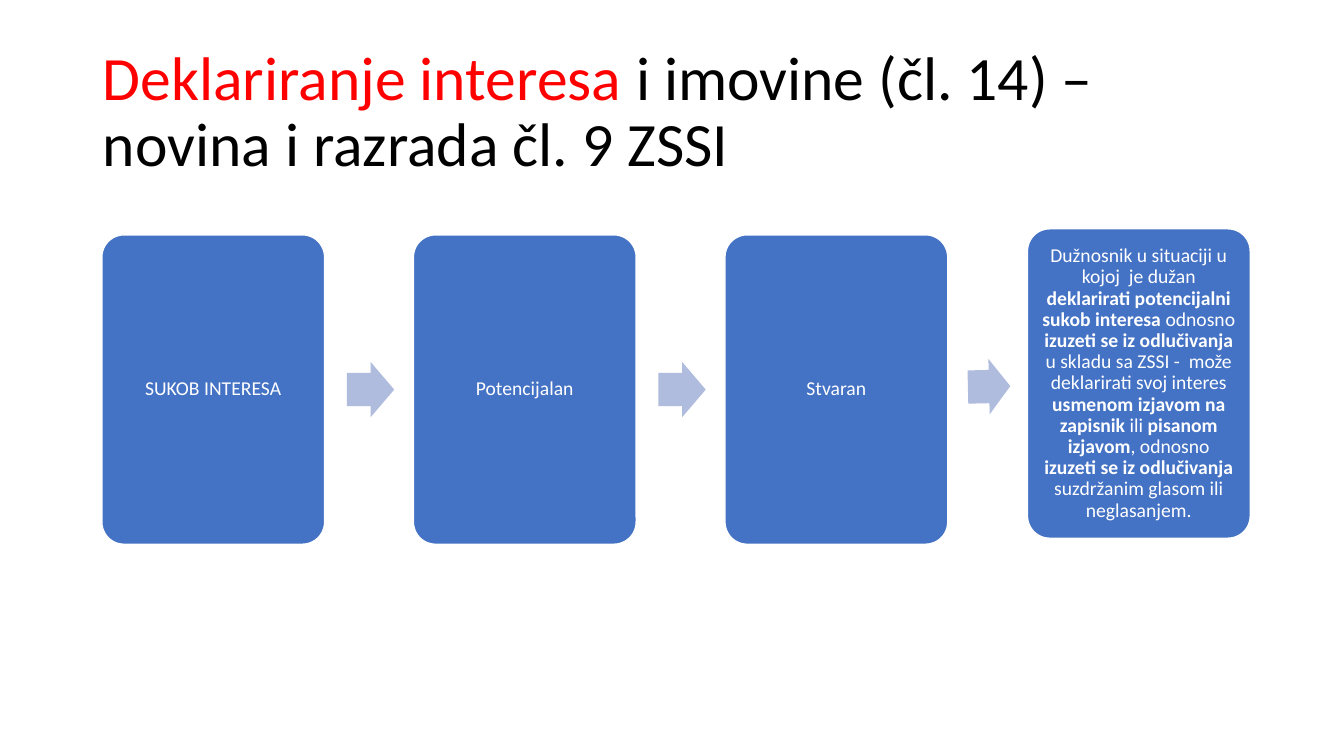
from dataclasses import dataclass

from pptx import Presentation
from pptx import util as u
from pptx.dml.color import RGBColor
from pptx.enum import shapes, text


@dataclass(frozen=True)
class Theme:
    font: str = "Calibri"
    title_size: int = 44
    body_size: int = 14
    black: str = "000000"
    white: str = "FFFFFF"
    red: str = "FF0000"
    box: str = "4472C4"
    arrow: str = "B0BCDE"


THEME = Theme()

# Grid of the process, in inches
LEFT, TOP, PITCH = 1.01, 2.33, 3.09
BOX_W, BOX_H = 2.21, 3.07
ARROW_H, ARROW_GAP = 0.55, 0.22
LAST_LEFT, LAST_TOP = 10.19, 2.27

# Each step is a list of (text, bold) runs
STEPS = [
    [("SUKOB INTERESA", False)],
    [("Potencijalan", False)],
    [("Stvaran", False)],
    [
        ("Dužnosnik u situaciji u kojoj  je dužan ", False),
        ("deklarirati potencijalni sukob interesa ", True),
        ("odnosno ", False),
        ("izuzeti se iz odlučivanja ", True),
        ("u skladu sa ZSSI -  može deklarirati svoj interes ", False),
        ("usmenom izjavom na zapisnik", True),
        (" ili ", False),
        ("pisanom izjavom", True),
        (", odnosno ", False),
        ("izuzeti se iz odlučivanja ", True),
        ("suzdržanim glasom ili neglasanjem.", False),
    ],
]


def rgb(value):
    return RGBColor.from_string(value)


def format_paragraph(p, size, align):
    p.font.name, p.font.size = THEME.font, u.Pt(size)
    p.alignment, p.line_spacing = align, 0.9


def add_title(s, parts):
    sp = s.shapes.title
    sp.left, sp.top, sp.width, sp.height = map(u.Inches, (0.92, 0.4, 11.5, 1.45))
    tf = sp.text_frame
    tf.word_wrap, tf.auto_size = True, text.MSO_AUTO_SIZE.NONE
    tf.vertical_anchor = text.MSO_ANCHOR.MIDDLE
    p = tf.paragraphs[0]
    format_paragraph(p, THEME.title_size, text.PP_ALIGN.LEFT)
    for words, color in parts:
        r = p.add_run()
        r.text = words
        r.font.color.rgb = rgb(color)


def add_block(s, kind, box, fill, adjustments):
    sp = s.shapes.add_shape(kind, *map(u.Inches, box))
    sp.shadow.inherit = False
    sp.fill.solid()
    sp.fill.fore_color.rgb = rgb(fill)
    sp.line.fill.background()
    for i, value in enumerate(adjustments):
        sp.adjustments[i] = value
    return sp


def add_step(s, left, top, runs):
    sp = add_block(s, shapes.MSO_SHAPE.ROUNDED_RECTANGLE,
                   (left, top, BOX_W, BOX_H), THEME.box, [0.1])
    sp.line.color.rgb = rgb(THEME.white)
    sp.line.width = u.Pt(1)
    tf = sp.text_frame
    tf.word_wrap, tf.vertical_anchor = True, text.MSO_ANCHOR.MIDDLE
    tf.margin_left = tf.margin_right = tf.margin_top = tf.margin_bottom = u.Inches(0.06)
    p = tf.paragraphs[0]
    format_paragraph(p, THEME.body_size, text.PP_ALIGN.CENTER)
    p.font.color.rgb = rgb(THEME.white)
    for words, bold in runs:
        r = p.add_run()
        r.text, r.font.bold = words, bold


def add_arrow(s, left, middle, width, rotation=0):
    sp = add_block(s, shapes.MSO_SHAPE.RIGHT_ARROW,
                   (left, middle - ARROW_H / 2, width, ARROW_H), THEME.arrow, [0.6, 0.5])
    sp.rotation = rotation


def main():
    prs = Presentation()
    prs.slide_width, prs.slide_height = u.Inches(13.33), u.Inches(7.5)
    s = prs.slides.add_slide(prs.slide_layouts[5])

    # Title
    add_title(s, [("Deklariranje interesa ", THEME.red),
                  ("i imovine (čl. 14) – novina i razrada čl. 9 ZSSI", THEME.black)])

    # Evenly spaced steps, then the raised last one
    places = [(LEFT + i * PITCH, TOP) for i in range(3)] + [(LAST_LEFT, LAST_TOP)]
    for (left, top), runs in zip(places, STEPS):
        add_step(s, left, top, runs)

    # Arrows between the steps, the last tilted towards the raised step
    for left, top in places[:2]:
        add_arrow(s, left + BOX_W + ARROW_GAP, top + BOX_H / 2, 0.47)
    add_arrow(s, 9.6, (TOP + LAST_TOP + BOX_H) / 2, 0.42, 358.7)

    prs.save("out.pptx")


if __name__ == "__main__":
    main()
